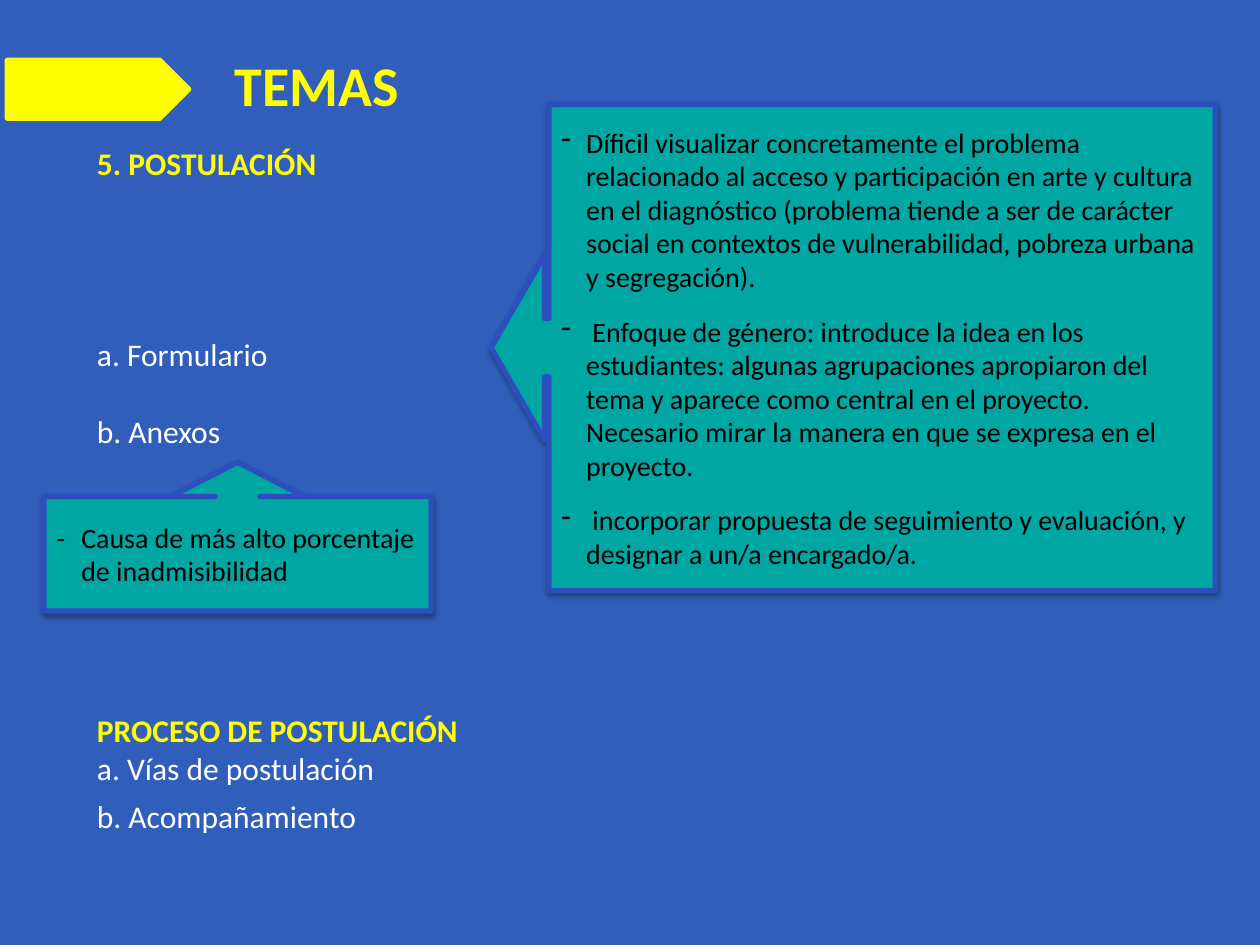
from lxml import etree
from pptx import Presentation
from pptx import util as u
from pptx.dml.color import RGBColor
from pptx.enum import shapes, text
from pptx.oxml import ns

HUES = {"back": "305EBA", "key": "FFFF00", "plain": "FFFFFF",
        "box": "00A6A2", "edge": "2D4FBD", "ink": "000000"}
FONT = "Calibri"


def add(node, tag, **attrs):
    return etree.SubElement(node, ns.qn(tag), attrs)


class Deck:
    def __init__(self):
        self.prs = Presentation()
        self.prs.slide_width, self.prs.slide_height = u.Cm(25.4), u.Cm(19.05)
        self.slide = self.prs.slides.add_slide(self.prs.slide_layouts[3])
        self.paint(self.slide.background, "back")

    def hue(self, name):
        return RGBColor.from_string(HUES[name])

    def paint(self, item, name):
        item.fill.solid()
        item.fill.fore_color.rgb = self.hue(name)

    def style(self, par, size, name, bold=False):
        par.alignment = text.PP_ALIGN.LEFT
        for run in par.runs:
            font = run.font
            font.name, font.size, font.bold = FONT, u.Pt(size), bold
            font.color.rgb = self.hue(name)

    def hang(self, par, indent=0, mark=None):
        """Set the hanging indent in cm and the bullet sign, if any."""
        props = par._p.get_or_add_pPr()
        props.set("marL", str(u.Cm(indent)))
        props.set("indent", str(-u.Cm(indent)))
        if mark:
            add(props, "a:buFontTx")
            add(props, "a:buChar", char=mark)
        else:
            add(props, "a:buNone")

    def place(self, idx, box):
        """Move a template placeholder and return its text frame."""
        item = self.slide.placeholders[idx]
        item.left, item.top, item.width, item.height = map(u.Cm, box)
        frame = item.text_frame
        frame.auto_size = text.MSO_AUTO_SIZE.NONE
        frame.vertical_anchor = text.MSO_ANCHOR.TOP
        return frame

    def title(self, words, box):
        frame = self.place(0, box)
        frame.text = words
        self.style(frame.paragraphs[0], 32, "key", True)

    def list(self, idx, box, rows):
        """Each row is its words, space before and space after in points."""
        frame = self.place(idx, box)
        frame.text = "\n".join(row[0] for row in rows)
        for i, (par, row) in enumerate(zip(frame.paragraphs, rows)):
            par.space_before, par.space_after = map(u.Pt, row[1:])
            self.hang(par)
            self.style(par, 18, "plain" if i else "key", not i)

    def shape(self, kind, box, fill, line, width):
        item = self.slide.shapes.add_shape(kind, *map(u.Cm, box))
        item.shadow.inherit = False
        self.paint(item, fill)
        item.line.color.rgb = self.hue(line)
        item.line.width = u.Pt(width)
        return item

    def shade(self, item):
        """Give a soft shadow that falls straight down."""
        effects = item._element.spPr.find(ns.qn("a:effectLst"))
        cast = add(effects, "a:outerShdw", blurRad=str(u.Pt(3.1)),
                   dist=str(u.Pt(1.8)), dir="5400000", rotWithShape="0")
        tint = add(cast, "a:srgbClr", val=HUES["ink"])
        add(tint, "a:alpha", val="35000")

    def callout(self, kind, box, adjust, rows, after, mark=None):
        item = self.shape(kind, box, "box", "edge", 3)
        for i, value in enumerate(adjust):
            item.adjustments[i] = value
        self.shade(item)
        frame = item.text_frame
        frame.word_wrap = True
        frame.vertical_anchor = text.MSO_ANCHOR.MIDDLE
        frame.text = "\n".join(rows)
        for par in frame.paragraphs:
            par.space_after = u.Pt(after)
            self.hang(par, 0.5, mark)
            self.style(par, 16, "ink")


def main():
    deck = Deck()
    kinds = shapes.MSO_SHAPE
    deck.title("TEMAS", (4.47, 0.89, 11.43, 1.63))
    deck.list(1, (1.7, 2.77, 21.21, 7.19), [
        ("5. POSTULACIÓN", 0, 0),
        ("a. Formulario", 88, 0),
        ("b. Anexos", 22, 0)])
    deck.shape(kinds.PENTAGON, (0.13, 1.2, 3.7, 1.2), "key", "key", 2)
    deck.callout(
        kinds.LEFT_ARROW_CALLOUT, (9.9, 2.11, 14.6, 9.8),
        (0.12, 0.19, 0.11, 0.92), [
            "Díficil visualizar concretamente el problema relacionado al "
            "acceso y participación en arte y cultura en el diagnóstico "
            "(problema tiende a ser de carácter social en contextos de "
            "vulnerabilidad, pobreza urbana y segregación).",
            " Enfoque de género: introduce la idea en los estudiantes: "
            "algunas agrupaciones apropiaron del tema y aparece como "
            "central en el proyecto. Necesario mirar la manera en que se "
            "expresa en el proyecto.",
            " incorporar propuesta de seguimiento y evaluación, y designar "
            "a un/a encargado/a."], 12, "-")
    deck.list(2, (1.7, 14.2, 21.21, 3.76), [
        ("PROCESO DE POSTULACIÓN", 0, 0),
        ("a. Vías de postulación", 0, 6),
        ("b. Acompañamiento", 0, 6)])
    deck.callout(
        kinds.UP_ARROW_CALLOUT, (0.89, 9.32, 7.8, 3),
        (0.3, 0.45, 0.23, 0.77),
        ["-\tCausa de más alto porcentaje de inadmisibilidad"], 10)
    deck.prs.save("out.pptx")


if __name__ == "__main__":
    main()
